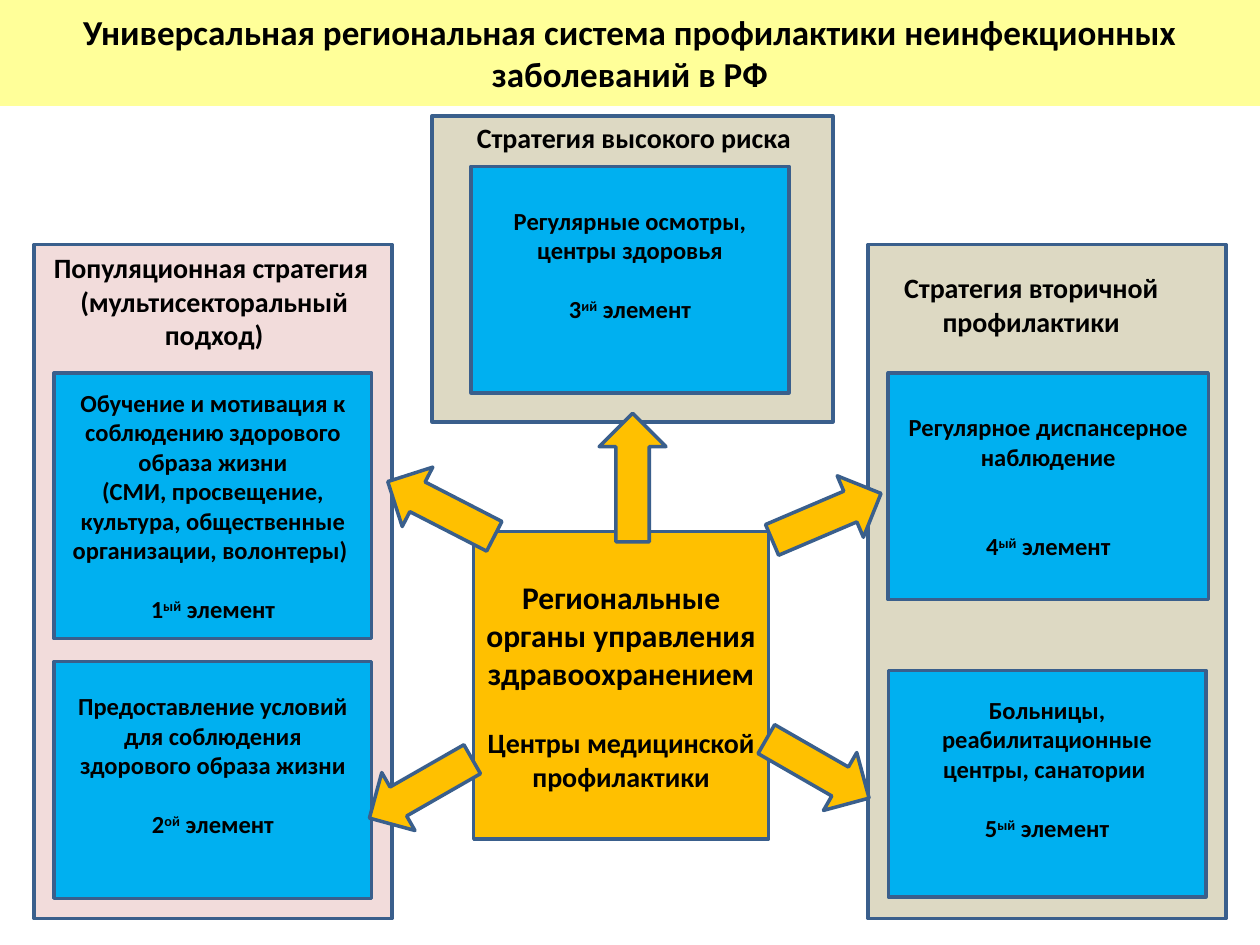
from dataclasses import dataclass

from pptx import Presentation
from pptx.dml.color import RGBColor
from pptx.enum.shapes import MSO_SHAPE
from pptx.enum.text import MSO_ANCHOR, MSO_AUTO_SIZE, PP_ALIGN
from pptx.util import Inches, Pt


@dataclass(frozen=True)
class Theme:
    """Colours, font and type sizes of the slide."""
    font: str = "Calibri"
    text: str = "000000"
    outline: str = "3A5F8C"
    banner: str = "FFFF99"
    beige: str = "DDD9C3"
    pink: str = "F2DCDB"
    card: str = "00B0F0"
    hub: str = "FFC000"
    line: float = 2
    title: float = 20
    hub_head: float = 18
    label: float = 16
    body: float = 14


THEME = Theme()
LINE_HEIGHT = 1.22

STRATEGIES = [
    dict(box=(3.43, 0.92, 3.18, 2.43), fill=THEME.beige,
         label=["Стратегия высокого риска"], label_box=(0.24, -0.01, 2.72, 0.37),
         cards=[((0.31, 0.4, 2.52, 1.8), ["Регулярные осмотры, центры здоровья"],
                 "3", "ий", 1, 1)]),
    dict(box=(0.27, 1.94, 2.84, 5.35), fill=THEME.pink,
         label=["Популяционная стратегия ", "(мультисекторальный", "подход)"],
         label_box=(0.04, 0, 2.78, 0.91),
         cards=[((0.16, 1.02, 2.52, 2.11),
                 ["Обучение и мотивация к соблюдению здорового образа жизни",
                  "(СМИ, просвещение, культура, общественные организации, волонтеры) "],
                 "1", "ый", 1, 0),
                ((0.16, 3.31, 2.52, 1.88),
                 ["Предоставление условий для соблюдения здорового образа жизни"],
                 "2", "ой", 1, 1)]),
    dict(box=(6.89, 1.94, 2.84, 5.35), fill=THEME.beige,
         label=["Стратегия вторичной ", "профилактики "],
         label_box=(0.17, 0.16, 2.3, 0.64),
         cards=[((0.16, 1.02, 2.54, 1.8), ["Регулярное диспансерное наблюдение"],
                 "4", "ый", 2, 0),
                ((0.16, 3.38, 2.52, 1.8),
                 ["Больницы, реабилитационные центры, санатории "],
                 "5", "ый", 1, 1)]),
]

HUB_BOX = (3.76, 4.22, 2.34, 2.44)
ARROWS = [(1.26, -0.43, 1.02, 180), (-0.42, 2.04, 0.94, 60.2),
          (-0.26, -0.18, 0.95, 117.2), (2.8, -0.12, 0.94, 246.9),
          (2.73, 1.88, 0.94, 299.9)]
ARROW_WIDTH = 0.53


def inside(box, part):
    """Return the part's box shifted by the origin of the enclosing box."""
    return (box[0] + part[0], box[1] + part[1], *part[2:])


def add_box(s, box, fill, kind=MSO_SHAPE.RECTANGLE):
    """Add an outlined, filled preset shape."""
    sp = s.shapes.add_shape(kind, *map(Inches, box))
    sp.shadow.inherit = False
    sp.fill.solid()
    sp.fill.fore_color.rgb = RGBColor.from_string(fill)
    sp.line.color.rgb = RGBColor.from_string(THEME.outline)
    sp.line.width = Pt(THEME.line)
    return sp


def add_run(p, text, size, raised=False):
    """Add a bold run, optionally as superscript."""
    r = p.add_run()
    r.text = text
    r.font.name = THEME.font
    r.font.size = Pt(size)
    r.font.bold = True
    r.font.color.rgb = RGBColor.from_string(THEME.text)
    if raised:
        r.font._element.set("baseline", "30000")


def next_paragraph(tf, gap=0):
    """Return a centred paragraph, using the empty first one when free."""
    p = tf.paragraphs[-1]
    if p.runs:
        p = tf.add_paragraph()
    p.alignment = PP_ALIGN.CENTER
    p.space_before = Pt(gap)
    return p


def add_title(s, box, text):
    """Place the title placeholder as a full-width banner."""
    sp = s.shapes.title
    sp.left, sp.top, sp.width, sp.height = map(Inches, box)
    sp.fill.solid()
    sp.fill.fore_color.rgb = RGBColor.from_string(THEME.banner)
    tf = sp.text_frame
    tf.auto_size = MSO_AUTO_SIZE.NONE
    tf.vertical_anchor = MSO_ANCHOR.MIDDLE
    add_run(next_paragraph(tf), text, THEME.title)


def add_card(s, box, texts, number, ending, gap_lines, spare_lines):
    """Add a card with its description and numbered element line."""
    tf = add_box(s, box, THEME.card).text_frame
    tf.word_wrap = True
    tf.vertical_anchor = MSO_ANCHOR.MIDDLE
    line = THEME.body * LINE_HEIGHT
    tf.margin_bottom = Inches(0.05) + Pt(spare_lines * line)
    for text in texts:
        add_run(next_paragraph(tf), text, THEME.body)
    p = next_paragraph(tf, gap_lines * line)
    add_run(p, number, THEME.body)
    add_run(p, ending, THEME.body, raised=True)
    add_run(p, " элемент", THEME.body)


def add_strategy(s, box, fill, label, label_box, cards):
    """Add a strategy panel with its label and cards."""
    add_box(s, box, fill)
    for part, *content in cards:
        add_card(s, inside(box, part), *content)
    tf = s.shapes.add_textbox(*map(Inches, inside(box, label_box))).text_frame
    tf.word_wrap = False
    tf.auto_size = MSO_AUTO_SIZE.SHAPE_TO_FIT_TEXT
    for text in label:
        add_run(next_paragraph(tf), text, THEME.label)


def add_hub(s, box):
    """Add the central authority box and the arrows leaving it."""
    tf = add_box(s, box, THEME.hub).text_frame
    tf.word_wrap = True
    tf.vertical_anchor = MSO_ANCHOR.MIDDLE
    add_run(next_paragraph(tf), "Региональные органы управления здравоохранением",
            THEME.hub_head)
    add_run(next_paragraph(tf, THEME.label * LINE_HEIGHT),
            "Центры медицинской профилактики", THEME.label)
    for x, y, length, angle in ARROWS:
        part = (x - ARROW_WIDTH / 2, y - length / 2, ARROW_WIDTH, length)
        sp = add_box(s, inside(box, part), THEME.hub, MSO_SHAPE.DOWN_ARROW)
        sp.rotation = angle


def main():
    """Build and save the slide."""
    prs = Presentation()
    prs.slide_width, prs.slide_height = Inches(10), Inches(7.5)
    s = prs.slides.add_slide(prs.slide_layouts[5])
    add_title(s, (0, 0, 10, 0.84),
              "Универсальная региональная система профилактики "
              "неинфекционных заболеваний в РФ")
    for strategy in STRATEGIES:
        add_strategy(s, **strategy)
    add_hub(s, HUB_BOX)
    prs.save("out.pptx")


if __name__ == "__main__":
    main()
